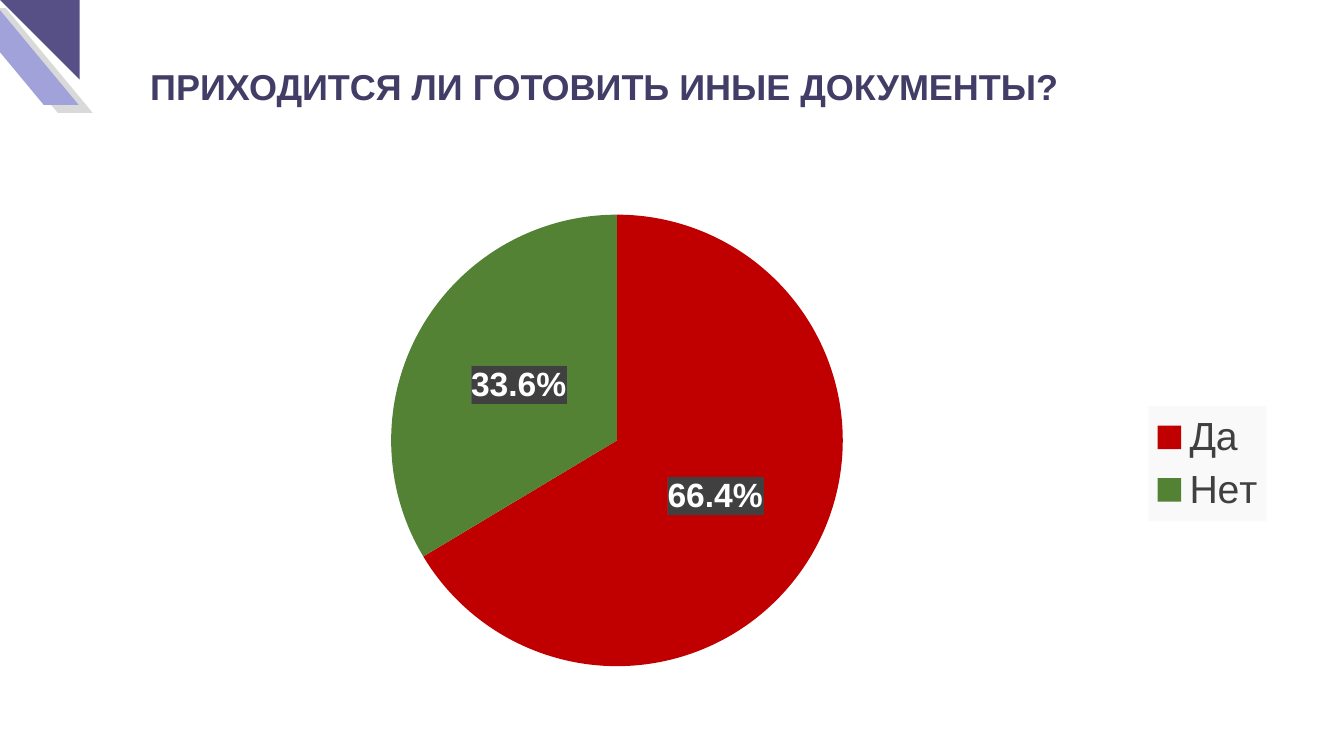
from lxml import etree
from pptx import Presentation
from pptx import util as u
from pptx.chart.data import CategoryChartData
from pptx.dml.color import RGBColor
from pptx.enum import chart as ch, shapes, text
from pptx.oxml import parse_xml
from pptx.oxml.ns import nsdecls, qn

# Content
TITLE = "ПРИХОДИТСЯ ЛИ ГОТОВИТЬ ИНЫЕ ДОКУМЕНТЫ?"
ANSWERS = [("Да", 66.4, RGBColor(0xC0, 0, 0)),
           ("Нет", 33.6, RGBColor(0x54, 0x82, 0x35))]

FONT = "Arial"
WHITE = RGBColor(0xFF, 0xFF, 0xFF)
HEADING = RGBColor(0x42, 0x3D, 0x67)
LEGEND_TEXT = RGBColor(0x40, 0x40, 0x40)
LEGEND_FILL = RGBColor(0xF9, 0xF9, 0xF9)
LABEL_DARK = RGBColor(0x40, 0x40, 0x40)
LABEL_LIGHT = RGBColor(0x59, 0x59, 0x59)
GREY = RGBColor(0xD9, 0xD9, 0xD9)
LILAC = RGBColor(0xA2, 0xA2, 0xDA)
VIOLET = RGBColor(0x56, 0x50, 0x87)

# Places: left, top, width, height in inches
TITLE_BOX = (1.39, 0.59, 9.57, 0.53)
CHART_BOX = (0.92, 2, 11.73, 4.76)
PIE_BOX = (3.88, 2.13, 4.48, 4.48)
LEGEND_BOX = (11.39, 4.03, 1.17, 1.14)
BAND, TRIANGLE = shapes.MSO_SHAPE.PARALLELOGRAM, shapes.MSO_SHAPE.RIGHT_TRIANGLE
CORNER = [(BAND, (-0.29, 0.08, 1.21, 1.04), GREY, ("flipH",)),
          (BAND, (-0.43, 0, 1.21, 1.04), LILAC, ("flipH",)),
          (TRIANGLE, (0, 0, 0.79, 0.79), VIOLET, ("flipH", "flipV"))]


def inches(box):
    return [u.Inches(length) for length in box]


def style(font, size, color, bold=False):
    font.name, font.size, font.bold = FONT, u.Pt(size), bold
    font.color.rgb = color


def write(frame, words, **look):
    frame.word_wrap = True
    frame.vertical_anchor = text.MSO_ANCHOR.TOP
    line = frame.paragraphs[0]
    line.alignment = text.PP_ALIGN.LEFT
    run = line.add_run()
    run.text = words
    style(run.font, **look)


def chart_layout(box, inner=False):
    """Manual layout that places a box as shares of the chart's size."""
    left, top, width, height = CHART_BOX
    shares = {"x": (box[0] - left) / width, "y": (box[1] - top) / height,
              "w": box[2] / width, "h": box[3] / height}
    layout = parse_xml(f"<c:layout {nsdecls('c')}><c:manualLayout/></c:layout>")
    parts = [("layoutTarget", "inner")] if inner else []
    parts += [("xMode", "edge"), ("yMode", "edge")]
    parts += [(key, f"{share:.4f}") for key, share in shares.items()]
    for tag, value in parts:
        etree.SubElement(layout[0], qn("c:" + tag)).set("val", value)
    return layout


def drop_layout(parent):
    for old in parent.findall(qn("c:layout")):
        parent.remove(old)


def add_fill(parent, fill):
    """Put a fill in front of the text format of a chart part."""
    parent.find(qn("c:txPr")).addprevious(
        parse_xml(f"<c:spPr {nsdecls('c', 'a')}>{fill}</c:spPr>"))


def solid(color):
    return f'<a:solidFill><a:srgbClr val="{color}"/></a:solidFill>'


def add_corner(slide):
    for kind, box, color, flips in CORNER:
        piece = slide.shapes.add_shape(kind, *inches(box))
        if kind == BAND:
            piece.adjustments[0] = 0.83
        piece.shadow.inherit = False
        piece.fill.solid()
        piece.fill.fore_color.rgb = color
        piece.line.fill.background()
        for flip in flips:
            piece.element.spPr.xfrm.set(flip, "1")


def add_pie(slide):
    data = CategoryChartData()
    data.categories = [name for name, _, _ in ANSWERS]
    data.add_series("Series 1", [share for _, share, _ in ANSWERS])
    pie = slide.shapes.add_chart(ch.XL_CHART_TYPE.PIE, *inches(CHART_BOX), data).chart
    pie.has_title = False
    style(pie.font, 10, RGBColor(0, 0, 0))
    add_fill(pie.element, solid(WHITE))

    # Slices
    plot = pie.plots[0]
    plot.vary_by_categories = True
    for index, (_, _, color) in enumerate(ANSWERS):
        slice_fill = plot.series[0].points[index].format.fill
        slice_fill.solid()
        slice_fill.fore_color.rgb = color
    area = pie.element.chart.plotArea
    drop_layout(area)
    area.insert(0, chart_layout(PIE_BOX, inner=True))

    # Percentages on a striped ground
    labels = plot.series[0].data_labels
    labels.show_percentage, labels.show_value = True, False
    labels.number_format, labels.number_format_is_linked = "0.0%", False
    labels.position = ch.XL_LABEL_POSITION.CENTER
    style(labels.font, 24, WHITE, bold=True)
    add_fill(plot.series[0].format.fill and plot.series[0]._element.find(qn("c:dLbls")),
             f'<a:pattFill prst="dkVert"><a:fgClr><a:srgbClr val="{LABEL_DARK}"/></a:fgClr>'
             f'<a:bgClr><a:srgbClr val="{LABEL_LIGHT}"/></a:bgClr></a:pattFill>')

    # Legend
    pie.has_legend = True
    legend = pie.legend
    legend.position = ch.XL_LEGEND_POSITION.RIGHT
    legend.include_in_layout = False
    style(legend.font, 28, LEGEND_TEXT)
    key = pie.element.chart.find(qn("c:legend"))
    drop_layout(key)
    key.find(qn("c:overlay")).addprevious(chart_layout(LEGEND_BOX))
    add_fill(key, solid(LEGEND_FILL))


def main():
    deck = Presentation()
    deck.slide_width, deck.slide_height = u.Inches(13.33), u.Inches(7.5)
    slide = deck.slides.add_slide(deck.slide_layouts[5])
    add_corner(slide)
    heading = slide.shapes.title
    heading.left, heading.top, heading.width, heading.height = inches(TITLE_BOX)
    write(heading.text_frame, TITLE, size=25.7, color=HEADING, bold=True)
    add_pie(slide)
    deck.save("out.pptx")


if __name__ == "__main__":
    main()
